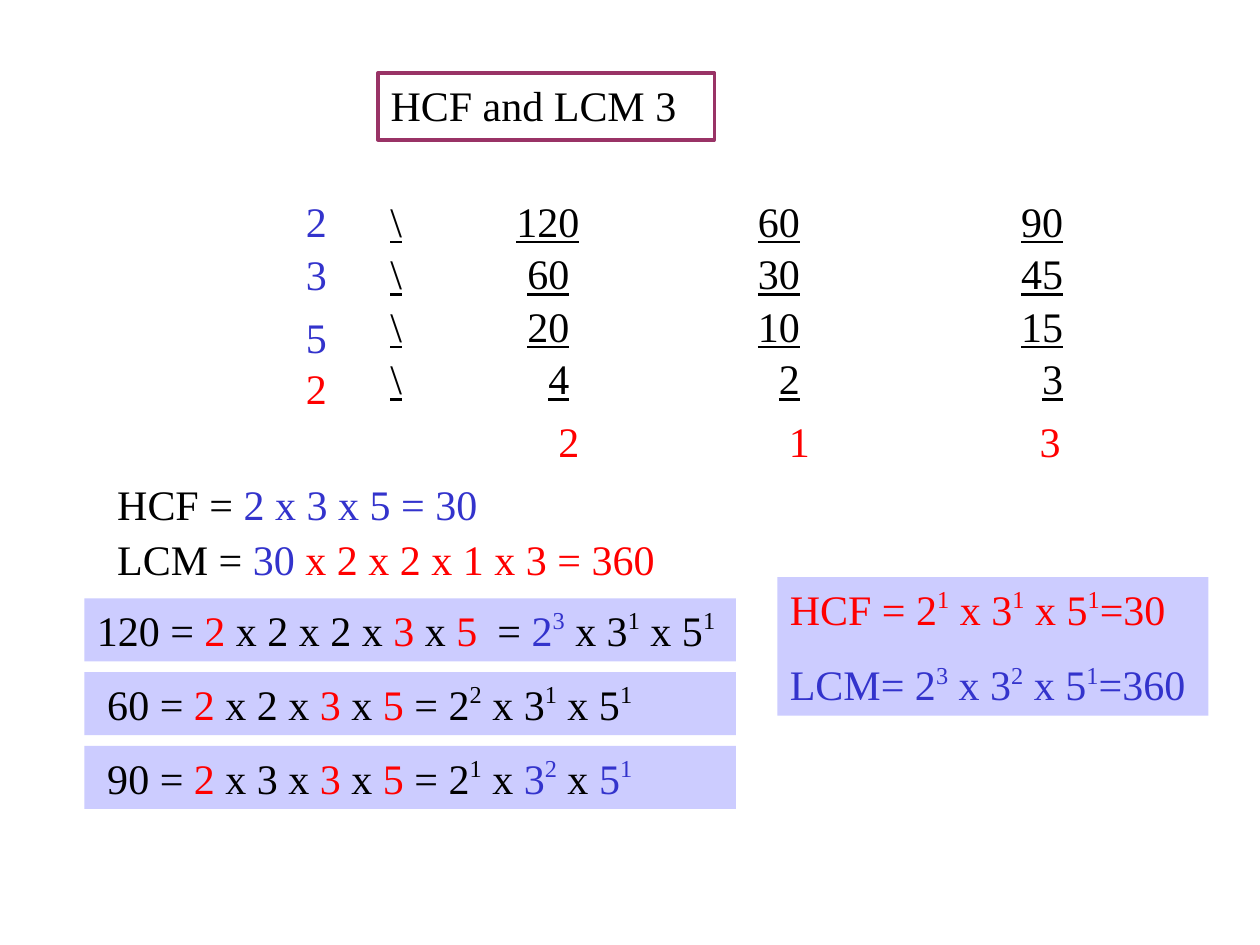
from lxml.etree import SubElement
from pptx import Presentation
from pptx.dml.color import RGBColor
from pptx.enum.shapes import MSO_SHAPE
from pptx.enum.text import MSO_ANCHOR, MSO_AUTO_SIZE, PP_ALIGN
from pptx.oxml.ns import qn
from pptx.util import Inches, Pt

COLORS = {"ink": "000000", "blue": "3333CC", "red": "FF0000",
          "pale": "CCCCFF", "plum": "993366"}
FONT = "Times New Roman"
SIZE = 24


def tint(name):
    return RGBColor.from_string(COLORS[name])


def write(para, text, color="ink", under=False):
    """Add text; the digit after each ^ is raised."""
    head, *rest = text.split("^")
    parts = [(head, False)]
    for piece in rest:
        parts += [(piece[0], True), (piece[1:], False)]
    for part, high in parts:
        if not part:
            continue
        run = para.add_run()
        run.text = part
        font = run.font
        font.name, font.size = FONT, Pt(SIZE)
        font.color.rgb = tint(color)
        if under:
            font.underline = True
        if high:
            font._element.set("baseline", "40000")


def fill(shape, lines, gap=0):
    """Put lines of (text, color) pairs in a shape, from its top left."""
    frame = shape.text_frame
    frame.word_wrap = True
    frame.auto_size = MSO_AUTO_SIZE.NONE
    frame.vertical_anchor = MSO_ANCHOR.TOP
    for i, line in enumerate(lines):
        para = frame.paragraphs[0] if i == 0 else frame.add_paragraph()
        para.alignment = PP_ALIGN.LEFT
        para.line_spacing = 1.0
        para.space_before = Pt(gap if i else 0)
        for text, color in line:
            write(para, text, color)


def set_tabs(para, stops, align="r"):
    tabs = SubElement(para._p.get_or_add_pPr(), qn("a:tabLst"))
    for stop in stops:
        SubElement(tabs, qn("a:tab"), pos=str(Inches(stop)), algn=align)


def place(shape, box):
    shape.left, shape.top, shape.width, shape.height = map(Inches, box)


def add_text(slide, box):
    shape = slide.shapes.add_textbox(*map(Inches, box))
    shape.text_frame.word_wrap = True
    return shape


def add_panel(slide, box, lines, gap=0):
    shape = slide.shapes.add_shape(MSO_SHAPE.RECTANGLE, *map(Inches, box))
    shape.shadow.inherit = False
    shape.fill.solid()
    shape.fill.fore_color.rgb = tint("pale")
    shape.line.fill.background()
    fill(shape, lines, gap)
    return shape


def add_title(slide, box):
    title = slide.shapes.title
    place(title, box)
    title.line.color.rgb = tint("plum")
    title.line.width = Pt(2)
    fill(title, [[("HCF and LCM 3", "ink")]])


def add_ladder(slide, box):
    """Division ladder: divisors at left, underlined rows, last quotients."""
    left, top, width, height = box
    indent = 0.67
    factors = [("2", "blue", 0), ("3", "blue", 0.42),
               ("5", "blue", 0.92), ("2", "red", 1.33)]
    for text, color, drop in factors:
        fill(add_text(slide, (left, top + drop, 0.5, height)), [[(text, color)]])

    rows = [("120", "60", "90"), ("60", "30", "45"),
            ("20", "10", "15"), ("4", "2", "3")]
    for i, row in enumerate(rows):
        shape = add_text(slide, (left + indent, top + i * 1.25 / 3,
                                 width - indent, height))
        para = shape.text_frame.paragraphs[0]
        set_tabs(para, (1.42 if i else 1.5, 3.25, 5.34))
        write(para, "\t".join(("\\",) + row), under=True)

    shape = add_text(slide, (left + indent, top + 1.75, width - indent, height))
    para = shape.text_frame.paragraphs[0]
    set_tabs(para, (1.5, 3.33, 5.32))
    write(para, "\t2\t1\t3", "red")


def add_answers(slide, box):
    body = slide.placeholders[1]
    place(body, box)
    fill(body, [
        [("HCF = ", "ink"), ("2 x 3 x 5 = 30", "blue")],
        [("LCM = ", "ink"), ("30 ", "blue"), ("x 2 x 2 x 1 x 3 = 360", "red")],
    ], gap=2.4)
    for para in body.text_frame.paragraphs:
        props = para._p.get_or_add_pPr()
        props.set("marL", "0")
        props.set("indent", "0")
        SubElement(props, qn("a:buNone"))


def add_primes(slide, box):
    """One panel for each number written as a product of primes."""
    left, top, width, height = box
    sums = [
        ("120", " x 2 x 2 x ",
         [("\t= ", "ink"), ("2^3", "blue"), (" x 3^1 x 5^1", "ink")]),
        (" 60", " x 2 x ", [(" = 2^2 x 3^1 x 5^1", "ink")]),
        (" 90", " x 3 x ",
         [(" = 2^1 x ", "ink"), ("3^2", "blue"), (" x ", "ink"), ("5^1", "blue")]),
    ]
    for i, (number, middle, powers) in enumerate(sums):
        line = [(number + " = ", "ink"), ("2", "red"), (middle, "ink"),
                ("3", "red"), (" x ", "ink"), ("5", "red")] + powers
        panel = add_panel(slide, (left, top + i * 1.17 / 2, width, height), [line])
        if i == 0:
            set_tabs(panel.text_frame.paragraphs[0], (3.18,), "l")


def add_result(slide, box):
    add_panel(slide, box, [[("HCF = 2^1 x 3^1 x 5^1=30", "red")],
                           [("LCM= 2^3 x 3^2 x 5^1=360", "blue")]], gap=14.4)


def main():
    deck = Presentation()
    deck.slide_width, deck.slide_height = Inches(10), Inches(7.5)
    slide = deck.slides.add_slide(deck.slide_layouts[1])
    add_title(slide, (3, 0.58, 2.67, 0.53))
    add_ladder(slide, (2.33, 1.5, 6.5, 0.5))
    add_answers(slide, (0.83, 3.75, 7.58, 0.92))
    add_primes(slide, (0.67, 4.75, 5.17, 0.5))
    add_result(slide, (6.17, 4.58, 3.42, 1.1))
    deck.save("out.pptx")


if __name__ == "__main__":
    main()
